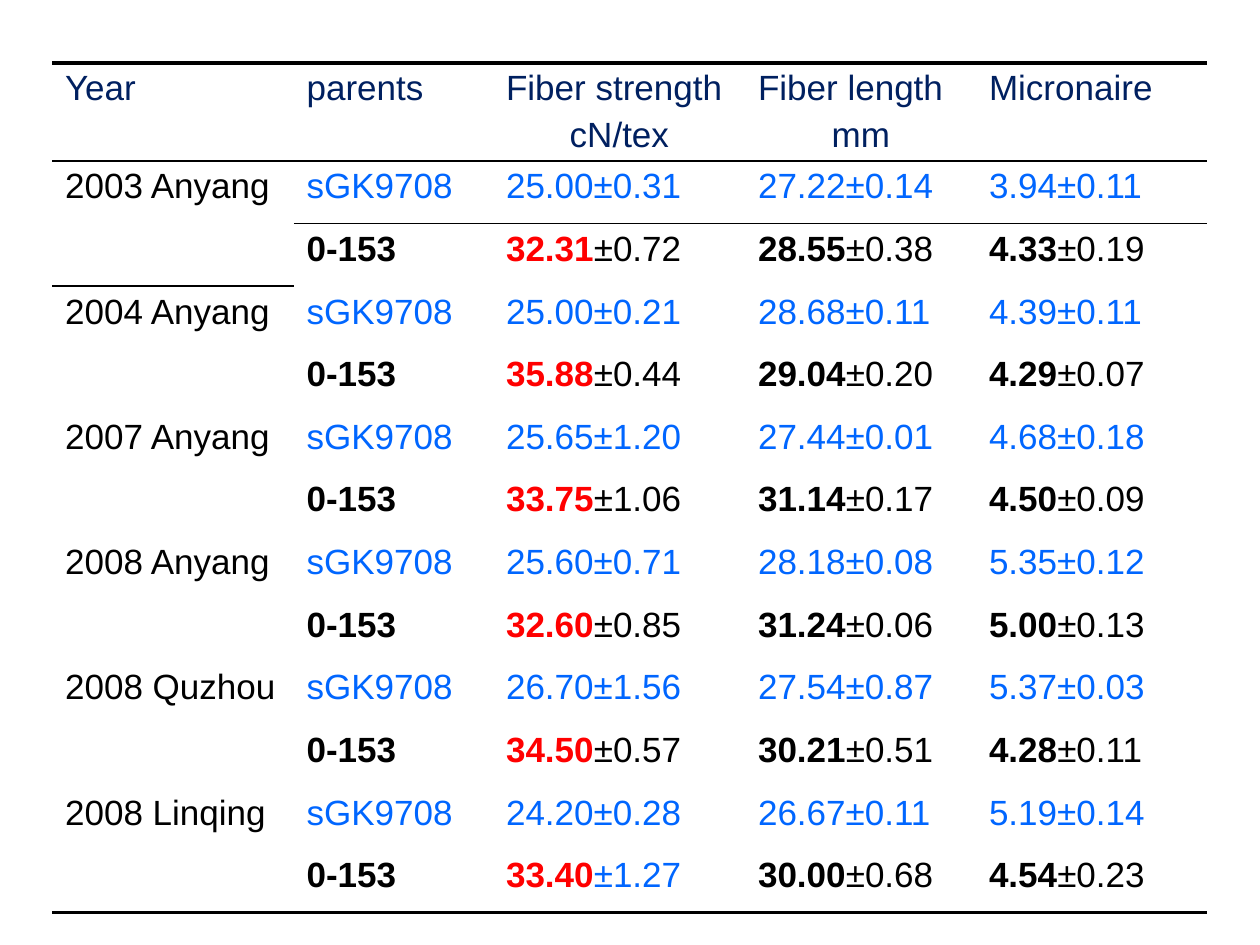
from lxml import etree
from pptx import Presentation
from pptx import util as u
from pptx.dml.color import RGBColor
from pptx.enum import text
from pptx.oxml.ns import qn

HEADS = ["Year", "parents", "Fiber strength\ncN/tex", "Fiber length\nmm", "Micronaire"]
PARENTS = ("sGK9708", "0-153")
TRIALS = [
    ("2003 Anyang", ("25.00±0.31", "27.22±0.14", "3.94±0.11"),
     ("32.31±0.72", "28.55±0.38", "4.33±0.19")),
    ("2004 Anyang", ("25.00±0.21", "28.68±0.11", "4.39±0.11"),
     ("35.88±0.44", "29.04±0.20", "4.29±0.07")),
    ("2007 Anyang", ("25.65±1.20", "27.44±0.01", "4.68±0.18"),
     ("33.75±1.06", "31.14±0.17", "4.50±0.09")),
    ("2008 Anyang", ("25.60±0.71", "28.18±0.08", "5.35±0.12"),
     ("32.60±0.85", "31.24±0.06", "5.00±0.13")),
    ("2008 Quzhou", ("26.70±1.56", "27.54±0.87", "5.37±0.03"),
     ("34.50±0.57", "30.21±0.51", "4.28±0.11")),
    ("2008 Linqing", ("24.20±0.28", "26.67±0.11", "5.19±0.14"),
     ("33.40±1.27", "30.00±0.68", "4.54±0.23")),
]
BLUE_ERRORS = {"±1.27"}
COLORS = {"head": "002060", "base": "0066FF", "main": "000000",
          "best": "FF0000", "white": "FFFFFF"}
FONT = {"name": "Arial", "size": u.Pt(20)}
NO_GRID = "{2D5ABB26-0587-4C30-8999-92F81FD0307C}"
LEFT, TOP = 30, 36
WIDTHS = [138, 114, 144, 132, 132]
HEAD_H, ROW_H = 56, 35.8
THICK, THIN = 2.25, 1


def write(par, words, color, bold=False):
    run = par.add_run()
    run.text = words
    for key, val in {**FONT, "bold": bold}.items():
        setattr(run.font, key, val)
    run.font.color.rgb = RGBColor.from_string(COLORS[color])


def rule(cell, side, width):
    """Draw a black border on side T or B of a cell."""
    line = etree.SubElement(cell._tc.get_or_add_tcPr(), qn(f"a:ln{side}"),
                            w=str(u.Pt(width)))
    fill = etree.SubElement(line, qn("a:solidFill"))
    etree.SubElement(fill, qn("a:srgbClr"), val=COLORS["main"])


def fill_head(grid):
    for col, title in enumerate(HEADS):
        frame = grid.cell(0, col).text_frame
        for num, words in enumerate(title.split("\n")):
            par = frame.add_paragraph() if num else frame.paragraphs[0]
            if num:
                par.alignment = text.PP_ALIGN.CENTER
                par.space_before = u.Pt(4)
            write(par, words, "head")


def fill_trials(grid):
    for num, (year, base, line) in enumerate(TRIALS):
        row = 1 + 2 * num
        first = grid.cell(row, 0)
        first.merge(grid.cell(row + 1, 0))
        write(first.text_frame.paragraphs[0], year, "main")
        for col, words in enumerate((PARENTS[0], *base), 1):
            write(grid.cell(row, col).text_frame.paragraphs[0], words, "base")
        for col, words in enumerate((PARENTS[1], *line), 1):
            par = grid.cell(row + 1, col).text_frame.paragraphs[0]
            mean, sign, error = words.partition("±")
            write(par, mean, "best" if col == 2 else "main", True)
            if sign:
                tail = sign + error
                write(par, tail, "base" if tail in BLUE_ERRORS else "main")


def style(grid, rows):
    for row in range(rows):
        for col in range(len(HEADS)):
            cell = grid.cell(row, col)
            if row < 2:
                rule(cell, "T", THIN if row else THICK)
            if row == 0:
                rule(cell, "B", THIN)
            if row == rows - 1 or (row == rows - 2 and col == 0):
                rule(cell, "B", THICK)
            if col == 2:
                cell.fill.solid()
                cell.fill.fore_color.rgb = RGBColor.from_string(COLORS["white"])
            else:
                cell.fill.background()


def main():
    deck = Presentation()
    deck.slide_width, deck.slide_height = u.Pt(720), u.Pt(540)
    slide = deck.slides.add_slide(deck.slide_layouts[6])
    heights = [HEAD_H] + [ROW_H] * (2 * len(TRIALS))
    frame = slide.shapes.add_table(
        len(heights), len(WIDTHS), u.Pt(LEFT), u.Pt(TOP),
        u.Pt(sum(WIDTHS)), u.Pt(sum(heights)))
    grid = frame.table
    grid.first_row = grid.horz_banding = False
    grid._tbl.tblPr.find(qn("a:tableStyleId")).text = NO_GRID
    for col, width in zip(grid.columns, WIDTHS):
        col.width = u.Pt(width)
    for row, height in zip(grid.rows, heights):
        row.height = u.Pt(height)
    fill_head(grid)
    fill_trials(grid)
    style(grid, len(heights))
    deck.save("out.pptx")


if __name__ == "__main__":
    main()
